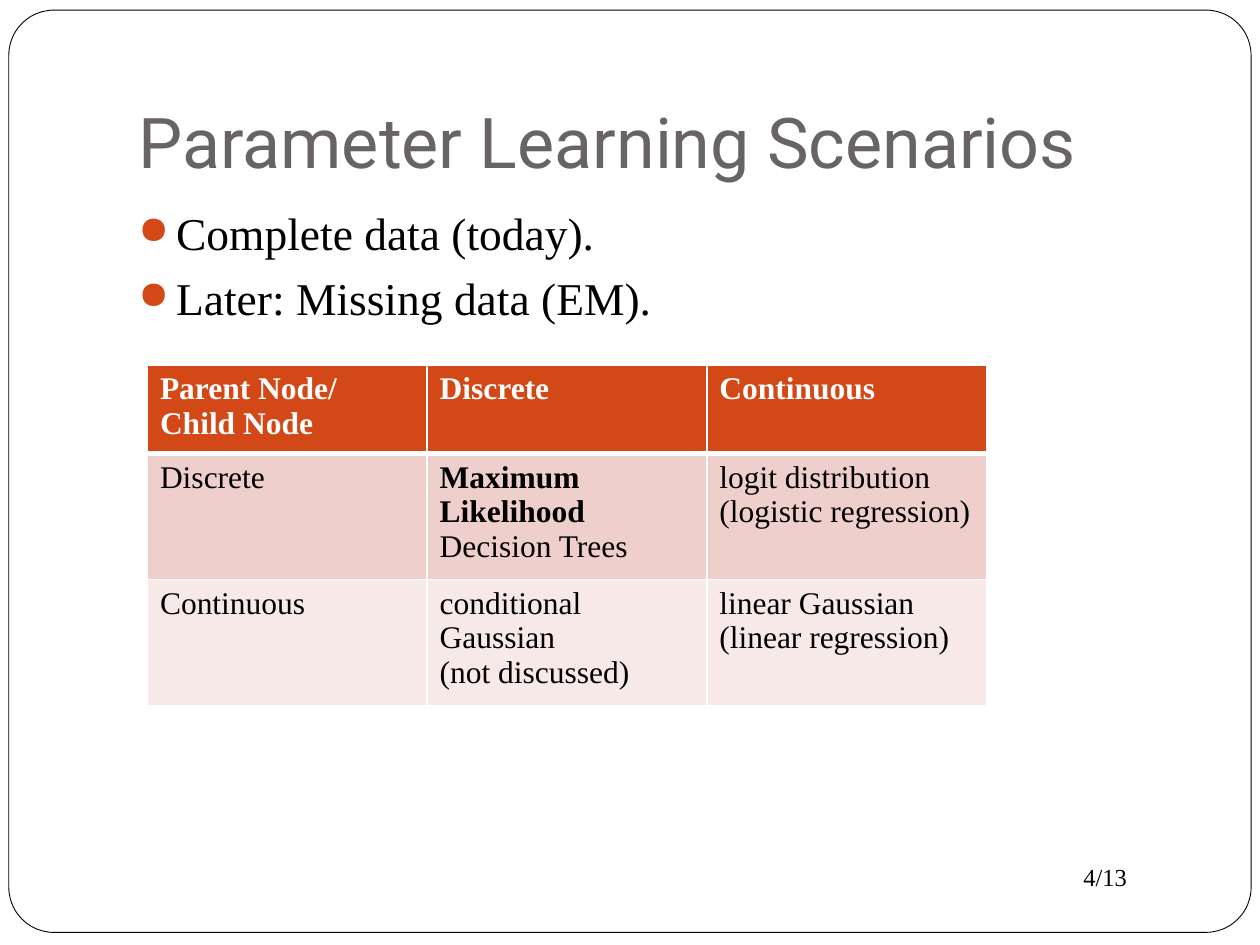
from lxml.etree import SubElement as Sub
from pptx import Presentation
from pptx.dml.color import RGBColor as RGB
from pptx.enum.shapes import MSO_SHAPE as Shape
from pptx.enum.text import MSO_ANCHOR as Anchor, MSO_AUTO_SIZE as Fit
from pptx.oxml.ns import qn
from pptx.util import Inches, Pt

HUES = {"white": "FFFFFF", "black": "000000", "title": "696464",
        "accent": "D34817", "band": "EFCFCC", "pale": "F7E9E8"}
SERIF = "Times New Roman"
POINTS = ["Complete data (today).", "Later: Missing data (EM)."]
# Each cell is a list of lines; a line starting with * is bold.
ROWS = [
    [["*Parent Node/", "*Child Node"], ["*Discrete"], ["*Continuous"]],
    [["Discrete"], ["*Maximum Likelihood", "Decision Trees"],
     ["logit distribution", "(logistic regression)"]],
    [["Continuous"], ["conditional Gaussian", "(not discussed)"],
     ["linear Gaussian", "(linear regression)"]],
]
FILLS = ["accent", "band", "pale"]
HEIGHTS = [0.65, 0.93, 0.92]


def hue(name):
    return RGB.from_string(HUES[name])


def add_run(para, text, size, color="black", font=SERIF, bold=False):
    run = para.add_run()
    run.text = text
    run.font.size = Pt(size)
    run.font.name = font
    run.font.bold = bold
    run.font.color.rgb = hue(color)


def add_frame(slide):
    box = slide.shapes.add_shape(Shape.ROUNDED_RECTANGLE, Inches(0.07),
                                 Inches(0.08), Inches(9.86), Inches(7.32))
    box.adjustments[0] = 0.049
    box.shadow.inherit = False
    box.fill.solid()
    box.fill.fore_color.rgb = hue("white")
    box.line.color.rgb = hue("black")
    box.line.width = Pt(0.5)
    # Behind the title placeholder
    tree = slide.shapes._spTree
    tree.remove(box._element)
    tree.insert(2, box._element)


def set_title(slide, text):
    title = slide.shapes.title
    title.left, title.top = Inches(1), Inches(0.3)
    title.width, title.height = Inches(8.5), Inches(1.25)
    frame = title.text_frame
    frame.auto_size = Fit.NONE
    frame.vertical_anchor = Anchor.BOTTOM
    frame.margin_bottom = Inches(0.1)
    para = frame.paragraphs[0]
    para.alignment = 1
    add_run(para, text, 40, "title", "Roboto")


def add_box(slide, left, top, width, height):
    box = slide.shapes.add_textbox(Inches(left), Inches(top),
                                   Inches(width), Inches(height))
    box.text_frame.word_wrap = True
    return box.text_frame


def set_bullet(para):
    props = para._p.get_or_add_pPr()
    props.set("marL", str(Inches(0.3)))
    props.set("indent", str(-Inches(0.3)))
    color = Sub(props, qn("a:buClr"))
    Sub(color, qn("a:srgbClr"), val=HUES["accent"])
    Sub(props, qn("a:buSzPct"), val="85000")
    Sub(props, qn("a:buChar"), char="●")


def add_list(slide, items):
    frame = add_box(slide, 1, 1.58, 8.5, 5)
    for i, item in enumerate(items):
        para = frame.add_paragraph() if i else frame.paragraphs[0]
        para.space_before = Pt(5.8)
        set_bullet(para)
        add_run(para, item, 26)


def set_edges(cell, base):
    """Draw white cell borders, with the bottom one base points wide."""
    props = cell._tc.get_or_add_tcPr()
    for tag, width in zip(("lnL", "lnR", "lnT", "lnB"), (1, 1, 1, base)):
        line = Sub(props, qn(f"a:{tag}"), w=str(Pt(width)))
        fill = Sub(line, qn("a:solidFill"))
        Sub(fill, qn("a:srgbClr"), val=HUES["white"])


def fill_cell(cell, lines, fill, head):
    set_edges(cell, 3 if head else 1)
    cell.fill.solid()
    cell.fill.fore_color.rgb = hue(fill)
    para = cell.text_frame.paragraphs[0]
    for i, line in enumerate(lines):
        if i:
            para.add_line_break()
        add_run(para, line.lstrip("*"), 18, "white" if head else "black",
                bold=line.startswith("*"))


def add_grid(slide):
    table = slide.shapes.add_table(
        len(ROWS), len(ROWS[0]), Inches(1.17), Inches(2.9),
        Inches(6.66), Inches(sum(HEIGHTS))).table
    for r, row in enumerate(ROWS):
        table.rows[r].height = Inches(HEIGHTS[r])
        for c, lines in enumerate(row):
            fill_cell(table.cell(r, c), lines, FILLS[r], r == 0)


def main():
    deck = Presentation()
    deck.slide_width, deck.slide_height = Inches(10), Inches(7.5)
    slide = deck.slides.add_slide(deck.slide_layouts[5])
    add_frame(slide)
    add_run(add_box(slide, 8.5, 6.79, 1, 0.34).paragraphs[0], "4/13", 14)
    set_title(slide, "Parameter Learning Scenarios")
    add_list(slide, POINTS)
    add_grid(slide)
    deck.save("out.pptx")


if __name__ == "__main__":
    main()
